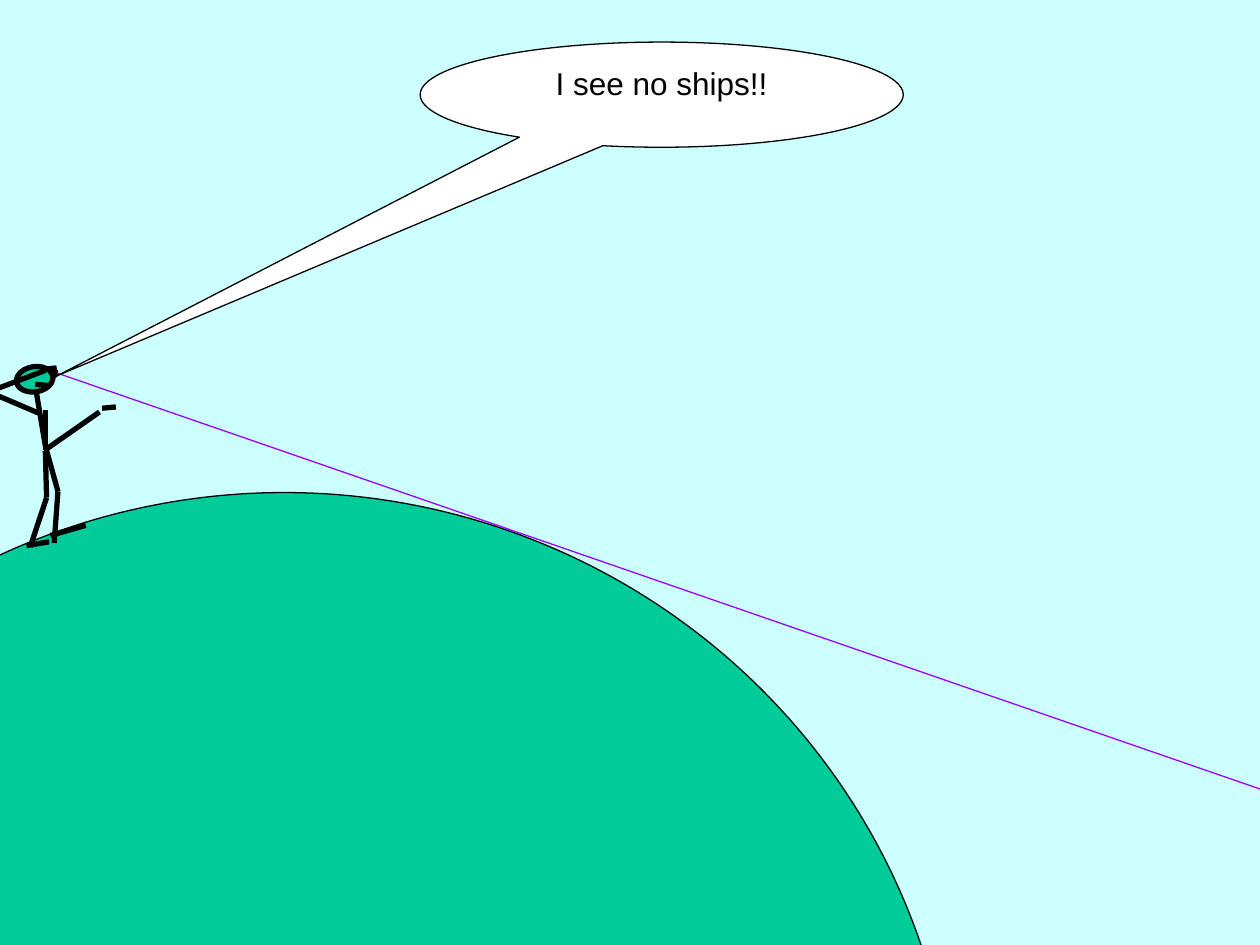
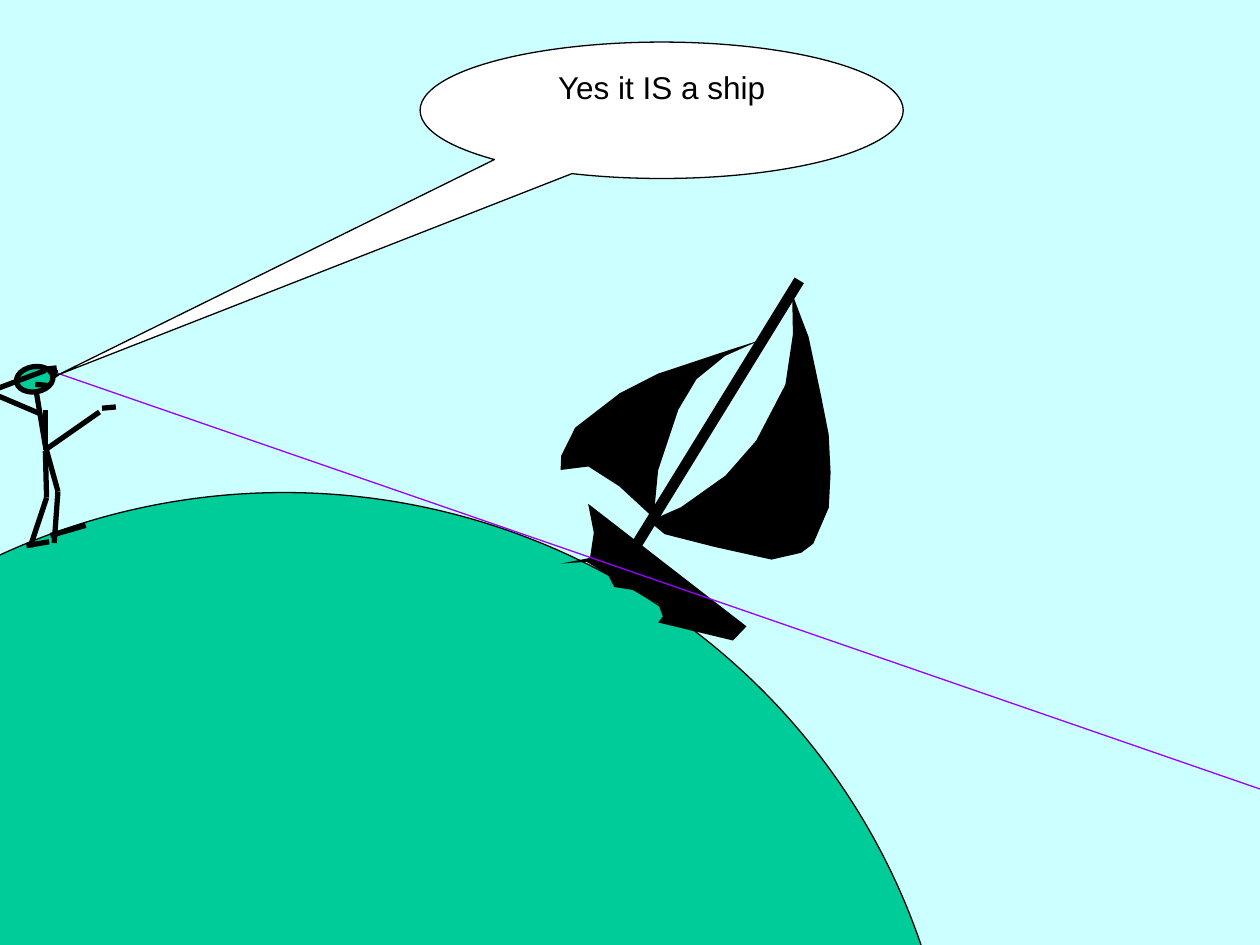
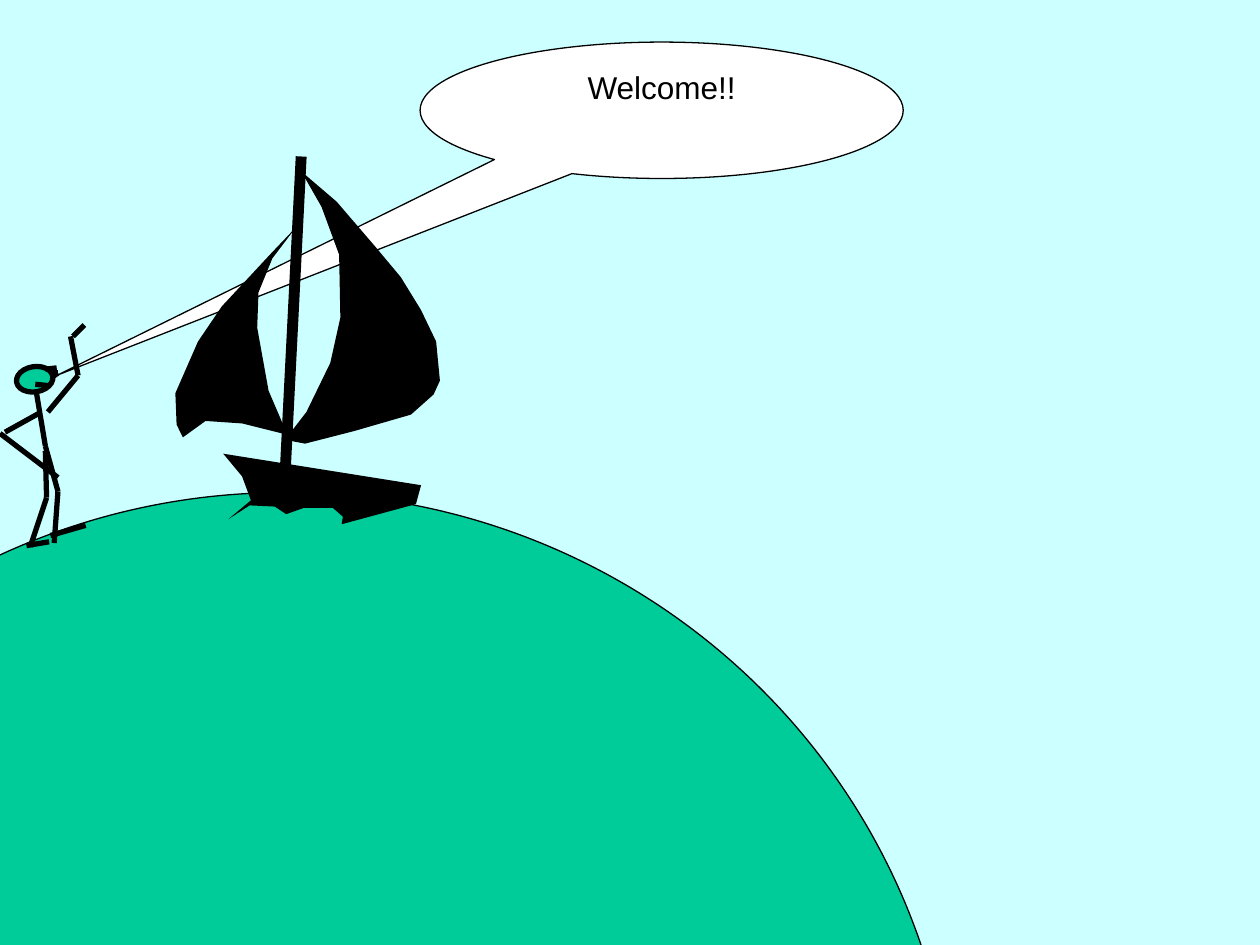
from math import cos, radians, sin

from lxml.etree import SubElement
from pptx import Presentation
from pptx.dml.color import RGBColor
from pptx.enum.shapes import MSO_CONNECTOR as Connector, MSO_SHAPE as Shape
from pptx.enum.text import MSO_ANCHOR as Anchor, PP_ALIGN as Align
from pptx.oxml.ns import qn
from pptx.util import Cm, Pt

COLORS = {
    "sky": "CCFFFF",
    "sea": "00CC99",
    "ink": "000000",
    "speech": "FFFFFF",
    "sight": "9900FF",
}
FONT = "Arial"
GRID = Cm(2.54) // 100
THIN, THICK = 0.75, 3

SEEN_TILT = 2.9
MAST_CENTRE = (232.5, 249.5)
MAST_SIZE = (Cm(0.22), Cm(6.38))
SHIP = {
    "mainsail": [
        (239, 136), (267, 160), (298, 196), (318, 220), (334, 246), (346, 271),
        (349, 302), (344, 313), (326, 329), (281, 342), (242, 352), (226, 349),
        (243, 327), (262, 288), (270, 252), (269, 202), (255, 164),
    ],
    "foresail": [
        (228, 345), (213, 310), (204, 260), (205, 232), (216, 205), (235, 180),
        (216, 200), (176, 243), (157, 271), (139, 312), (140, 337), (145, 347),
        (163, 334), (192, 336),
    ],
    "hull": [
        (181, 412), (198, 401), (218, 402), (227, 408), (241, 403), (264, 403),
        (272, 410), (271, 416), (330, 400), (334, 385), (177, 360), (192, 378),
        (199, 397),
    ],
}

BODY = [
    [(40, 175), (68, 167)],
    [(21, 183), (39, 180)],
    [(29, 62), (36, 104), (46, 140), (43, 181)],
    [(36, 108), (37, 145), (24, 184)],
    [(36, 43), (45, 42)],
    [(38, 56), (28, 55)],
    [(41, 46), (46, 46), (42, 49)],
]
LOOKING = [[(31, 78), (-9, 61), (36, 44)], [(36, 75), (36, 107), (79, 77)],
           [(81, 74), (92, 73)]]
WAVING = [[(31, 78), (4, 93)], [(0, 94), (46, 129)],
          [(38, 77), (62, 48), (56, 17)], [(58, 17), (67, 8)]]


def color(name):
    return RGBColor.from_string(COLORS[name])


def turn(point, degrees):
    x, y = point
    angle = radians(degrees)
    return x * cos(angle) - y * sin(angle), x * sin(angle) + y * cos(angle)


def paint(part, fill, stroke=None, width=THIN):
    part.shadow.inherit = False
    part.fill.solid()
    part.fill.fore_color.rgb = color(fill)
    if stroke:
        part.line.color.rgb = color(stroke)
        part.line.width = Pt(width)
    else:
        part.line.fill.background()


def add_line(shapes, start, end, stroke, width):
    line = shapes.add_connector(Connector.STRAIGHT, *start, *end)
    line.line.color.rgb = color(stroke)
    line.line.width = Pt(width)
    SubElement(line._element.spPr, qn("a:effectLst"))


def planet(slide, left, top, width, height):
    globe = slide.shapes.add_shape(Shape.OVAL, left, top, width, height)
    paint(globe, "sea", "ink")


def ship(slide, centre_x, centre_y, tilt):
    vessel = slide.shapes.add_group_shape().shapes
    width, height = MAST_SIZE
    mast = vessel.add_shape(Shape.RECTANGLE, centre_x - width // 2,
                            centre_y - height // 2, width, height)
    parts = [mast]
    pivot_x, pivot_y = MAST_CENTRE
    for seen in SHIP.values():
        upright = [turn((x - pivot_x, y - pivot_y), -SEEN_TILT) for x, y in seen]
        xs, ys = zip(*upright)
        mid_x, mid_y = (min(xs) + max(xs)) / 2, (min(ys) + max(ys)) / 2
        start, *rest = [((x - mid_x) * GRID, (y - mid_y) * GRID) for x, y in upright]
        shift_x, shift_y = turn((mid_x * GRID, mid_y * GRID), tilt)
        builder = vessel.build_freeform(*start, scale=1.0)
        builder.add_line_segments(rest)
        parts.append(builder.convert_to_shape(round(centre_x + shift_x),
                                              round(centre_y + shift_y)))
    for part in parts:
        part.rotation = tilt
        paint(part, "ink")


def sailor(slide, left, top, arms):
    figure = slide.shapes.add_group_shape().shapes
    head = figure.add_shape(Shape.OVAL, left + Cm(0.33), top + Cm(1.04),
                            Cm(0.74), Cm(0.51))
    head.rotation = 350.9
    paint(head, "sea", "ink", THICK)
    for stroke in BODY + arms:
        points = [(left + x * GRID, top + y * GRID) for x, y in stroke]
        for start, end in zip(points, points[1:]):
            add_line(figure, start, end, "ink", THICK)


def sight_line(slide, left, top, width, height):
    add_line(slide.shapes, (left, top), (left + width, top + height), "sight", THIN)


def speech(slide, left, top, width, height, words, tail):
    bubble = slide.shapes.add_shape(Shape.OVAL_CALLOUT, left, top, width, height)
    bubble.adjustments[0], bubble.adjustments[1] = tail
    paint(bubble, "speech", "ink")
    frame = bubble.text_frame
    frame.text = words
    frame.word_wrap = True
    frame.vertical_anchor = Anchor.TOP
    line = frame.paragraphs[0]
    line.alignment = Align.CENTER
    font = line.runs[0].font
    font.name, font.size = FONT, Pt(18)
    font.color.rgb = color("ink")


def new_slide(deck):
    slide = deck.slides.add_slide(deck.slide_layouts[6])
    slide.background.fill.solid()
    slide.background.fill.fore_color.rgb = color("sky")
    return slide


def scene(deck, words, bubble_height, tail, arms, ship_place=None, arrived=False):
    slide = new_slide(deck)
    bubble = (Cm(8.47), Cm(0.85), Cm(9.74), bubble_height, words, tail)
    if arrived:
        speech(slide, *bubble)
    planet(slide, Cm(-7.82), Cm(9.93), Cm(27.1), Cm(26.82))
    if ship_place:
        ship(slide, *ship_place)
    sailor(slide, Cm(0), Cm(6.35), arms)
    if not arrived:
        sight_line(slide, Cm(1.15), Cm(7.52), Cm(24.38), Cm(8.43))
        speech(slide, *bubble)


def main():
    deck = Presentation()
    deck.slide_width, deck.slide_height = Cm(25.4), Cm(19.05)
    scene(deck, "I see no ships!!", Cm(2.12), (-1.25, 2.67), LOOKING)
    scene(deck, "Yes it IS a ship", Cm(2.75), (-1.25, 1.94), LOOKING,
          (Cm(14.44), Cm(8.37), 31.6))
    scene(deck, "Welcome!!", Cm(2.75), (-1.25, 1.94), WAVING,
          (Cm(5.91), Cm(6.34), SEEN_TILT), arrived=True)
    deck.save("out.pptx")


if __name__ == "__main__":
    main()
